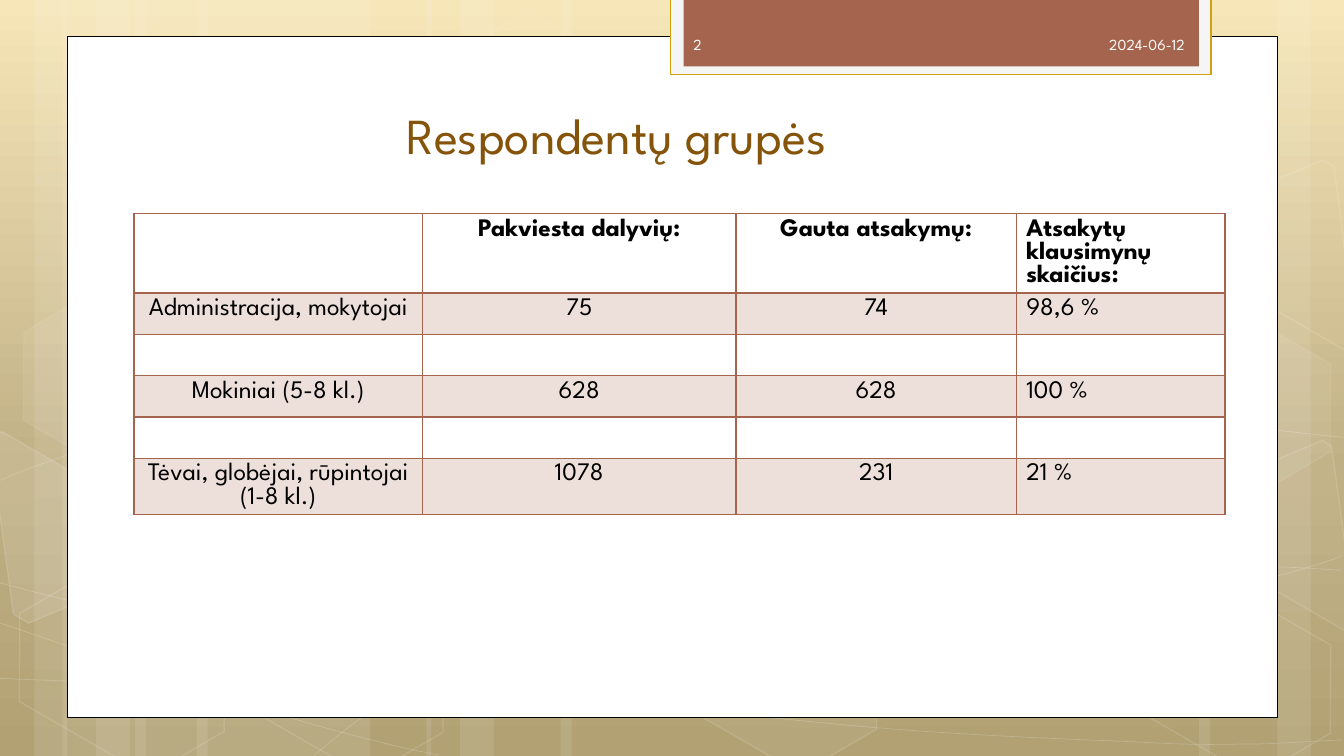
import copy
import math

import lxml.etree
import pptx
import pptx.dml.color
import pptx.enum.shapes
import pptx.enum.text
import pptx.oxml
import pptx.oxml.ns
import pptx.util

Inches, Pt = pptx.util.Inches, pptx.util.Pt
RGB = pptx.dml.color.RGBColor.from_string
KIND = pptx.enum.shapes.MSO_SHAPE
ALIGN = pptx.enum.text.PP_ALIGN
ANCHOR = pptx.enum.text.MSO_ANCHOR
qn = pptx.oxml.ns.qn


class Theme:
    font = "League Spartan"
    white, black, panel = "FFFFFF", "000000", "F5F5F5"
    rust, gold, brown, pale = "A5644E", "D2A010", "85540A", "FEFEFE"
    sky = [(0, "F6E4B0"), (0.62, "BAA878"), (1, "A99764")]
    title, body, small = 36, 18, 11
    pitch = 16.5
    tilt = 30


# Left edge and width of the pale upright bars
BARS = [(1.34, 2.33), (0, 0.67), (0.34, 1.11), (1.95, 2.33), (0.62, 0.67), (0.95, 1.11),
        (9.67, 2.33), (12.67, 0.67), (11.89, 1.11), (5.56, 4.11), (4.23, 0.67), (4.56, 1.11)]

# Bezier waves: a start point, then three points for each curve
WAVES = [
    [(-0.01, 6.73), (0.71, 6.76), (1.43, 6.79), (2.43, 6.78), (3.43, 6.77), (4.66, 6.75),
     (5.99, 6.65), (7.33, 6.55), (9.22, 6.36), (10.45, 6.17), (11.67, 5.98), (12.92, 5.68),
     (13.32, 5.51)],
    [(-0.01, 4.77), (0.37, 4.61), (0.75, 4.46), (1.51, 4.31), (2.27, 4.16), (3.34, 3.94),
     (4.52, 3.87), (5.71, 3.8), (7.14, 3.79), (8.61, 3.87), (10.08, 3.95), (12.52, 4.26),
     (13.32, 4.34)],
    [(-0.03, 6.17), (1.58, 6.72), (3.19, 7.27), (4.35, 7.49)],
    [(-0.01, 5.78), (0.4, 5.89), (0.82, 6), (1.6, 6.16), (2.37, 6.31), (3.53, 6.56),
     (4.64, 6.73), (5.76, 6.9), (7.16, 7.08), (8.26, 7.18), (9.37, 7.29), (10.55, 7.33),
     (11.26, 7.36), (11.96, 7.4), (12.14, 7.38), (12.49, 7.38), (12.83, 7.37),
     (13.08, 7.35), (13.32, 7.34)],
    [(3.12, 7.49), (3.36, 7.29), (3.59, 7.09), (3.92, 6.91), (4.24, 6.73), (4.69, 6.53),
     (5.06, 6.39), (5.43, 6.25), (5.66, 6.19), (6.15, 6.09), (6.64, 5.99), (7.54, 5.85),
     (8, 5.78), (8.47, 5.71), (8.54, 5.71), (8.96, 5.69), (9.37, 5.66), (10.02, 5.63),
     (10.48, 5.62), (10.94, 5.61), (11.71, 5.62), (11.71, 5.62), (12, 5.62), (12.3, 5.62),
     (12.59, 5.62), (12.84, 5.63), (13.06, 5.64), (13.18, 5.65), (13.3, 5.66),
     (13.26, 5.65), (13.3, 5.66)],
]

# Left, top, fill opacity, line opacity (percent)
HEXES = [(4.34, 0.36, 4, 8), (6.51, 5.89, 6, 12), (0.04, 5.91, 0, 12), (0.08, 3.12, 7, 8),
         (2.21, 5.92, 0, 12), (11.01, 5.93, 0, 12), (11.01, 3.14, 7, 8)]

# Fill opacity, centre and corners of the hexagons cut by the slide edge
SHARDS = [
    (10, (0.37, 5.35), [(-0.11, 4.34), (0.02, 4.28), (1.04, 4.87), (1.16, 5.81),
                        (0.28, 6.18), (0.13, 6.09)]),
    (4, (13.02, 5.2), [(12.24, 4.74), (13.12, 4.37), (13.21, 4.43), (13.46, 6.25),
                       (13.38, 6.28), (12.36, 5.69)]),
    (0, (13.02, 2.41), [(12.24, 1.96), (13.12, 1.59), (13.23, 1.65), (13.46, 3.46),
                        (13.38, 3.5), (12.36, 2.91)]),
]

ROWS = [
    ("", "Pakviesta dalyvių:", "Gauta atsakymų:", "Atsakytų klausimynų skaičius:"),
    ("Administracija, mokytojai", "75", "74", "98,6 %"),
    ("",) * 4,
    ("Mokiniai (5-8 kl.)", "628", "628", "100 %"),
    ("",) * 4,
    ("Tėvai, globėjai, rūpintojai (1-8 kl.)", "1078", "231", "21 %"),
]


def put(item, values):
    for name, value in values.items():
        setattr(item, name, value)


def fade(color, alpha):
    """Give a colour element an opacity in percent."""
    lxml.etree.SubElement(color, qn("a:alpha"), val=str(alpha * 1000))


def paint(shape, fill=None, line=None, width=1, clear=100, faint=100):
    shape.shadow.inherit = False
    for part, color, alpha, where in ((shape.fill, fill, clear, "p:spPr/a:solidFill/a:srgbClr"),
                                      (shape.line.fill, line, faint, "p:spPr/a:ln//a:srgbClr")):
        if not color or not alpha:
            part.background()
            continue
        part.solid()
        part.fore_color.rgb = RGB(color)
        if alpha < 100:
            fade(shape.element.xpath(where)[0], alpha)
    if line:
        shape.line.width = Pt(width)


def block(slide, box, kind=KIND.RECTANGLE, **look):
    shape = slide.shapes.add_shape(kind, *map(Inches, box))
    paint(shape, **look)
    return shape


def trace(slide, points, close, **look):
    spots = [(Inches(a), Inches(b)) for a, b in points]
    pen = slide.shapes.build_freeform(*spots[0])
    pen.add_line_segments(spots[1:], close=close)
    shape = pen.convert_to_shape()
    paint(shape, **look)
    return shape


def bend(shape):
    """Turn each three straight steps into one cubic curve."""
    steps = list(shape.element.iter(qn("a:lnTo")))
    for i in range(0, len(steps), 3):
        steps[i].addprevious(arc := lxml.etree.Element(qn("a:cubicBezTo")))
        for step in steps[i:i + 3]:
            arc.append(step[0])
            step.getparent().remove(step)


def turn(point, centre, angle):
    a, b = point[0] - centre[0], point[1] - centre[1]
    cos, sin = math.cos(math.radians(angle)), math.sin(math.radians(angle))
    return centre[0] + a * cos - b * sin, centre[1] + a * sin + b * cos


def write(frame, text, size, color, align=ALIGN.LEFT, bold=False, pitch=None):
    para = frame.paragraphs[0]
    put(para, {"alignment": align, "line_spacing": pitch})
    if text:
        run = para.add_run()
        run.text = text
        put(run.font, {"size": Pt(size), "name": Theme.font, "bold": bold})
        run.font.color.rgb = RGB(color)


def label(slide, box, text, size, color, align=ALIGN.LEFT, **frame):
    area = slide.shapes.add_textbox(*map(Inches, box)).text_frame
    put(area, {"word_wrap": True, **frame})
    write(area, text, size, color, align)


def scene(slide, box):
    # Gradient behind everything
    fill = slide.background.fill
    fill.gradient()
    fill.gradient_angle = 270
    stops = next(slide.element.iter(qn("a:gsLst")))
    stops.append(copy.deepcopy(stops[0]))
    for stop, (place, color) in zip(fill.gradient_stops, Theme.sky):
        stop.position = place
        stop.color.rgb = RGB(color)
    # Bars, waves and hexagons
    x, y, w, h = box
    for left, wide in BARS:
        block(slide, (x + left, y, wide, h), fill=Theme.white, clear=10)
    for knots in WAVES:
        bend(trace(slide, [(x + a, y + b) for a, b in knots], False,
                   line=Theme.white, width=0.5, faint=20))
    for left, top, clear, faint in HEXES:
        cell = block(slide, (x + left, y + top, 2.34, 1.52), KIND.HEXAGON, fill=Theme.white,
                     line=Theme.white, clear=clear, faint=faint)
        cell.rotation = Theme.tilt
        cell.adjustments[0] = 0.285
    for clear, centre, points in SHARDS:
        flat = [turn(point, centre, -Theme.tilt) for point in points]
        shard = trace(slide, [(x + a, y + b) for a, b in flat], True, fill=Theme.white,
                      line=Theme.white, clear=clear, faint=12)
        shard.rotation = Theme.tilt


def tab(slide, box):
    x, y, w, h = box
    block(slide, box, fill=Theme.panel, line=Theme.gold)
    block(slide, (x + 0.13, y, w - 0.25, h - 0.08), fill=Theme.rust)
    look = {"size": Theme.small, "color": Theme.pale, "vertical_anchor": ANCHOR.MIDDLE}
    label(slide, (x + 2.09, y + 0.26, 3.11, 0.4), "2024-06-12", align=ALIGN.RIGHT, **look)
    label(slide, (x + 0.13, y + 0.26, 1.94, 0.4), "2", **look)


def edge(cell, widths):
    props = cell._tc.get_or_add_tcPr()
    for spot, (side, width) in enumerate(widths.items()):
        props.insert(spot, pptx.oxml.parse_xml(
            f'<a:ln{side} {pptx.oxml.ns.nsdecls("a")} w="{Pt(width)}"><a:solidFill>'
            f'<a:srgbClr val="{Theme.rust}"/></a:solidFill></a:ln{side}>'))


def grid(slide, box, widths, tall):
    table = slide.shapes.add_table(len(ROWS), len(widths), *map(Inches, box)).table
    put(table, {"first_row": False, "horz_banding": False})
    for column, width in zip(table.columns, widths):
        column.width = Inches(width)
    for r, texts in enumerate(ROWS):
        table.rows[r].height = Inches(tall)
        for c, text in enumerate(texts):
            cell = table.cell(r, c)
            cell.fill.background()
            if r % 2:
                cell.fill.solid()
                cell.fill.fore_color.rgb = RGB(Theme.rust)
                fade(cell._tc.xpath("a:tcPr/a:solidFill/a:srgbClr")[0], 20)
            edge(cell, {"L": 1, "R": 1, "T": 1, "B": 1 if r else 2})
            write(cell.text_frame, text, Theme.body, Theme.black,
                  ALIGN.LEFT if c == 3 else ALIGN.CENTER, r == 0, Pt(Theme.pitch))


def main():
    deck = pptx.Presentation()
    put(deck, {"slide_width": Inches(13.33), "slide_height": Inches(7.5)})
    slide = deck.slides.add_slide(deck.slide_layouts[6])
    scene(slide, (0, 0, 13.33, 7.5))
    block(slide, (0.67, 0.36, 12, 6.76), fill=Theme.white, line=Theme.black, width=0.5)
    tab(slide, (6.65, -0.02, 5.36, 0.76))
    label(slide, (3.07, 1.12, 8.7, 0.56), "Respondentų grupės", Theme.title, Theme.brown,
          margin_left=Inches(0.96), vertical_anchor=ANCHOR.BOTTOM)
    grid(slide, (1.33, 2.12, 10.82, 2.46), (2.86, 3.11, 2.78, 2.07), 0.41)
    deck.save("out.pptx")


if __name__ == "__main__":
    main()
